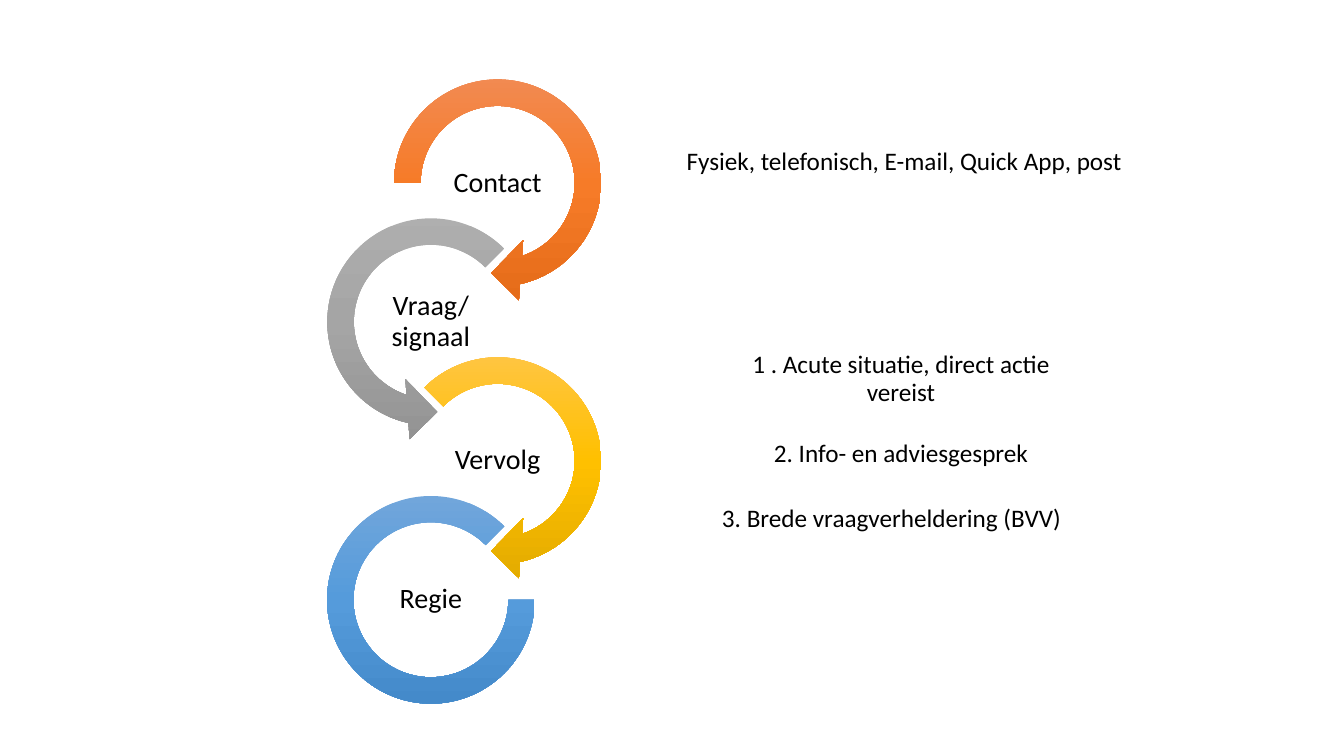
from copy import deepcopy
from dataclasses import dataclass

from pptx import Presentation
from pptx.dml.color import RGBColor
from pptx.enum.shapes import MSO_SHAPE
from pptx.enum.text import MSO_ANCHOR, PP_ALIGN
from pptx.oxml.ns import qn
from pptx.util import Pt

RIGHT_ARROW = MSO_SHAPE.CIRCULAR_ARROW
LEFT_ARROW = MSO_SHAPE.LEFT_CIRCULAR_ARROW
ARC = MSO_SHAPE.BLOCK_ARC
CENTER = PP_ALIGN.CENTER
TOP = MSO_ANCHOR.TOP
MIDDLE = MSO_ANCHOR.MIDDLE


@dataclass(frozen=True)
class Theme:
    font: str = "Calibri"
    text: str = "000000"
    label_size: float = 20
    detail_size: float = 18
    orange: tuple = ("F18C57", "F67B28", "E56C19")
    gray: tuple = ("AFAFAF", "A5A5A5", "939393")
    yellow: tuple = ("FFC64B", "FFC000", "E3AB00")
    blue: tuple = ("71A6DB", "559BDB", "448ACA")


THEME = Theme()

RIGHT_X, LEFT_X = 355.5, 307.8
FIRST_Y, STEP_Y = 130.7, 99.25
ARROW_SIZE, ARC_SIZE = 172, 148.3
LABEL_WIDTH, LABEL_HEIGHT = 96.5, 48.2
INSET = 0.9
INDENT = 13.5

# Label, shape, centre x, diameter, adjustments, gradient
STAGES = [
    ("Contact", RIGHT_ARROW, RIGHT_X, ARROW_SIZE,
     (0.11, 11.42, 45, 108, 0.125), THEME.orange),
    ("Vraag/ signaal", LEFT_ARROW, LEFT_X, ARROW_SIZE,
     (0.11, 11.42, 63, 189, 0.125), THEME.gray),
    ("Vervolg", RIGHT_ARROW, RIGHT_X, ARROW_SIZE,
     (0.11, 11.42, 45, 135, 0.125), THEME.yellow),
    ("Regie", ARC, LEFT_X, ARC_SIZE, (0, 189, 0.127), THEME.blue),
]

# Text, left indent, line spacing
FOLLOW_UPS = [
    ("1 . Acute situatie, direct actie vereist", INDENT, 0.9),
    ("2. Info- en adviesgesprek", INDENT, 0.9),
    ("3. Brede vraagverheldering (BVV)", 0, 1),
]


def fill_gradient(shape, colors):
    """Fill from top to bottom with evenly spaced colours."""
    fill = shape.fill
    fill.gradient()
    fill.gradient_angle = 270
    stop_list = next(shape.element.iter(qn("a:gsLst")))
    while len(stop_list) < len(colors):
        stop_list.append(deepcopy(stop_list[0]))
    for index, (stop, color) in enumerate(zip(fill.gradient_stops, colors)):
        stop.position = index / (len(colors) - 1)
        stop.color.rgb = RGBColor.from_string(color)


def add_ring(page, kind, center_x, center_y, size, adjustments, colors):
    ring = page.shapes.add_shape(kind, Pt(center_x - size / 2), Pt(center_y - size / 2),
                                 Pt(size), Pt(size))
    for index, value in enumerate(adjustments):
        ring.adjustments[index] = value
    ring.shadow.inherit = False
    ring.line.fill.background()
    fill_gradient(ring, colors)


def add_box(page, left, top, width, height, anchor=MIDDLE, inset_top=INSET):
    frame = page.shapes.add_textbox(Pt(left), Pt(top), Pt(width), Pt(height)).text_frame
    frame.word_wrap = True
    frame.vertical_anchor = anchor
    frame.margin_left = frame.margin_right = frame.margin_bottom = Pt(INSET)
    frame.margin_top = Pt(inset_top)
    return frame


def write(para, text, size=THEME.detail_size, indent=0, line_spacing=0.9, space_before=0):
    para.alignment = CENTER
    para.line_spacing = line_spacing
    para.space_before = Pt(space_before)
    para._p.get_or_add_pPr().set("marL", str(Pt(indent)))
    span = para.add_run()
    span.text = text
    span.font.name = THEME.font
    span.font.size = Pt(size)
    span.font.color.rgb = RGBColor.from_string(THEME.text)


def add_stage(page, index, label, kind, center_x, size, adjustments, colors):
    center_y = FIRST_Y + index * STEP_Y
    add_ring(page, kind, center_x, center_y, size, adjustments, colors)
    frame = add_box(page, center_x - LABEL_WIDTH / 2, center_y - LABEL_HEIGHT / 2,
                    LABEL_WIDTH, LABEL_HEIGHT)
    write(frame.paragraphs[0], label, size=THEME.label_size)


def add_follow_ups(page):
    frame = add_box(page, 507.6, 183.6, 258.5, 172, anchor=TOP, inset_top=68)
    for index, (text, indent, line_spacing) in enumerate(FOLLOW_UPS):
        para = frame.add_paragraph() if index else frame.paragraphs[0]
        write(para, text, indent=indent, line_spacing=line_spacing,
              space_before=24.5 if index else 0)


def main():
    deck = Presentation()
    deck.slide_width, deck.slide_height = Pt(960), Pt(540)
    page = deck.slides.add_slide(deck.slide_layouts[6])
    for index, stage in enumerate(STAGES):
        add_stage(page, index, *stage)
    channels = add_box(page, 447.1, 92.2, 397.4, 48.2)
    write(channels.paragraphs[0], "Fysiek, telefonisch, E-mail, Quick App, post")
    add_follow_ups(page)
    deck.save("out.pptx")


if __name__ == "__main__":
    main()
